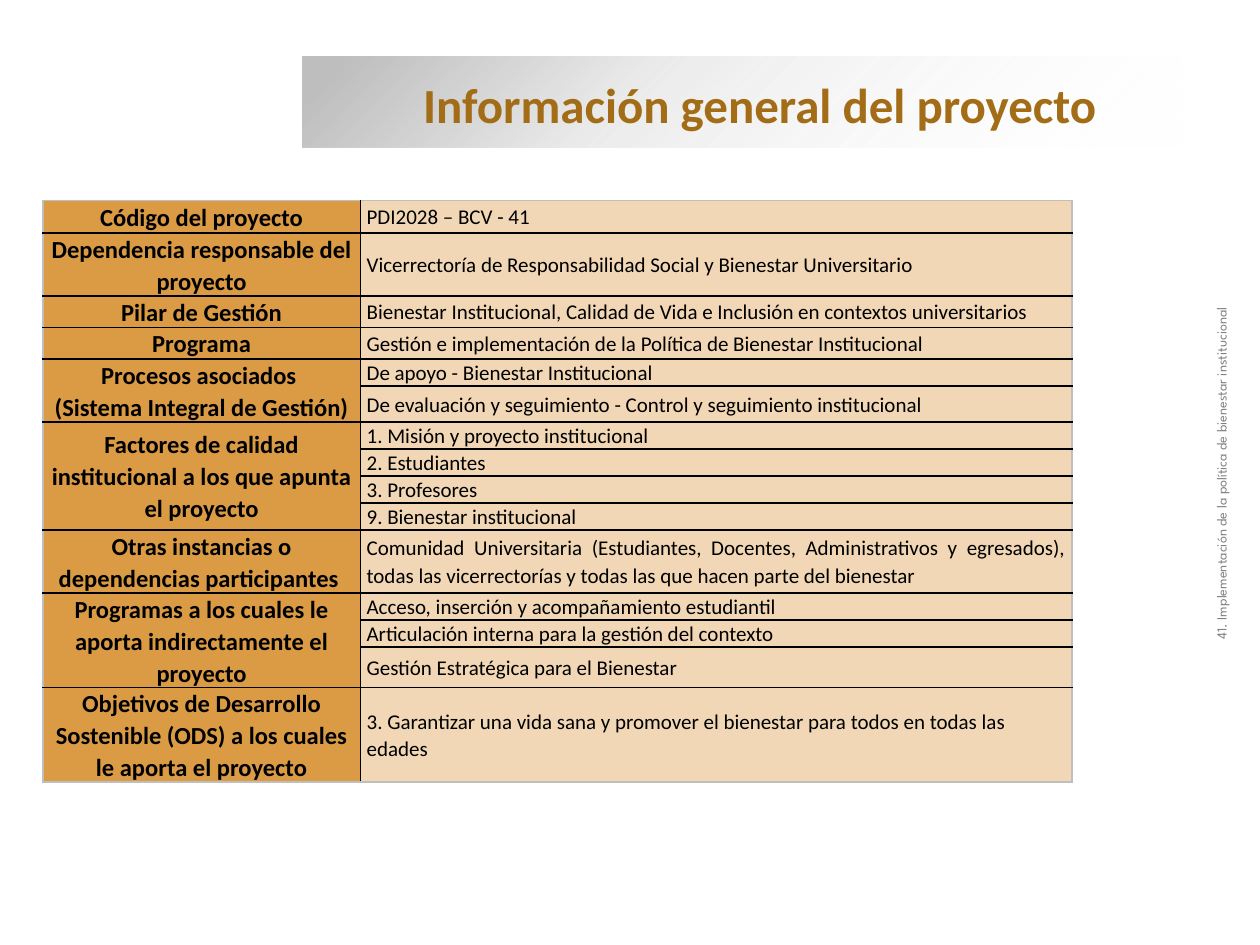
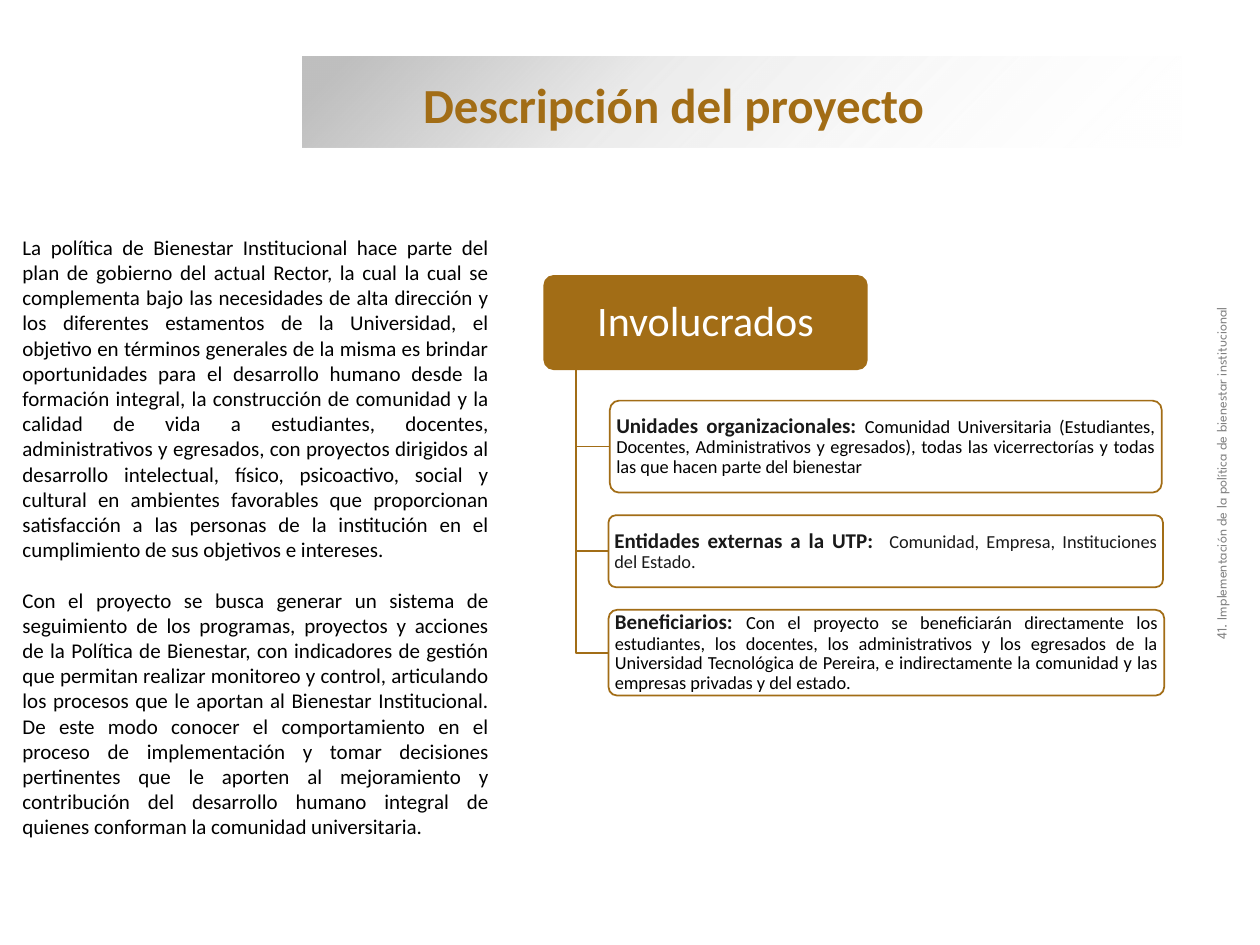
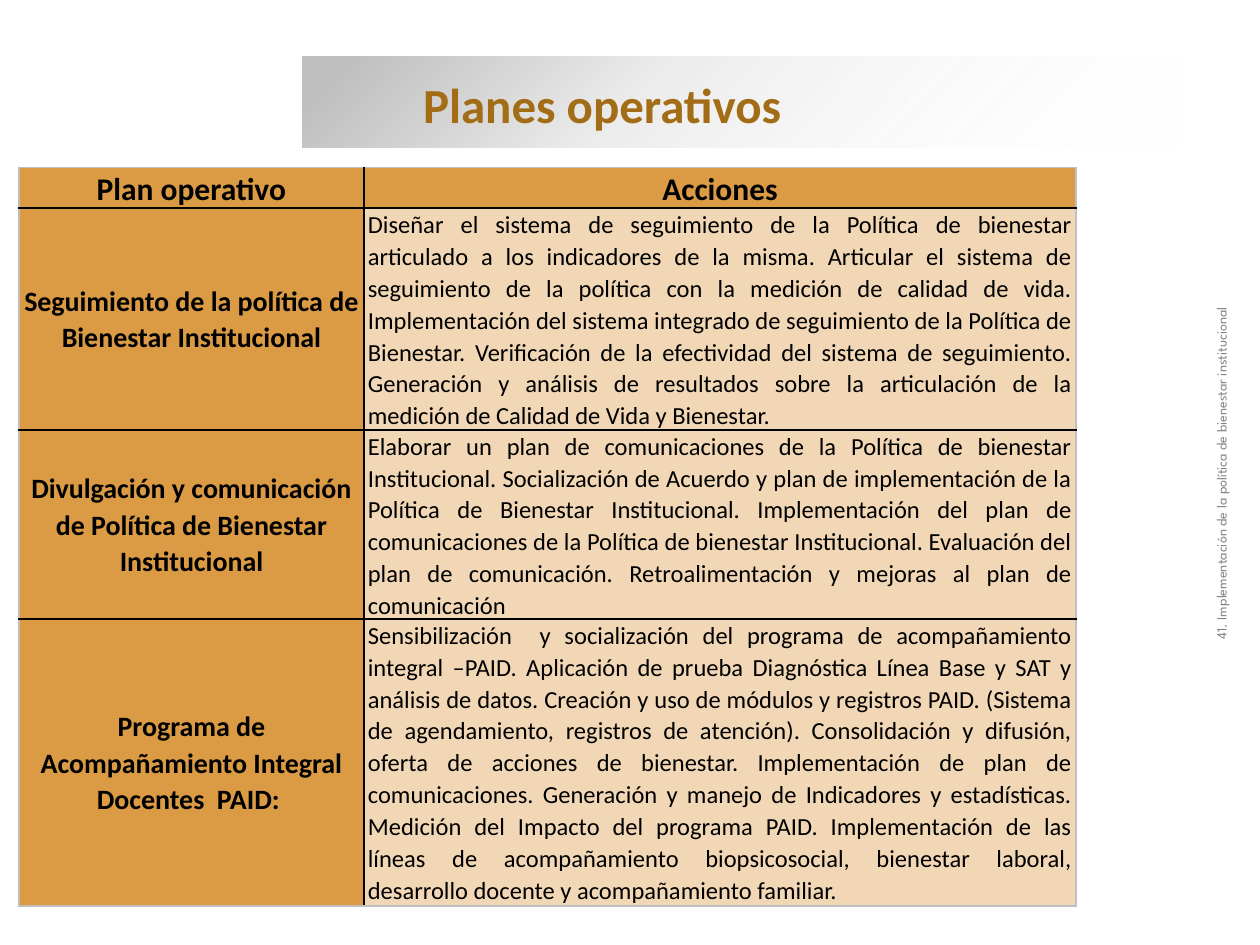
from dataclasses import dataclass

from lxml.etree import SubElement
from pptx import Presentation
from pptx.dml.color import RGBColor
from pptx.enum.shapes import MSO_SHAPE
from pptx.enum.text import MSO_ANCHOR, PP_ALIGN
from pptx.oxml import parse_xml
from pptx.oxml.ns import nsdecls, qn
from pptx.util import Inches, Pt

COLORS = {
    "brown": "A26D16",
    "ochre": "DB9B45",
    "sand": "F1D7B5",
    "silver": "BFBFBF",
    "gray": "808080",
    "ink": "191919",
    "black": "000000",
    "white": "FFFFFF",
}
FOOTER = "41. Implementación de la política de bienestar institucional"
BAND_STOPS = ((5, "silver", 100), (37, "silver", 31), (100, "white", 0))
TABLE_SPACING = 1.07


@dataclass(frozen=True)
class Box:
    left: float
    top: float
    width: float
    height: float

    def inches(self) -> tuple:
        return tuple(Inches(v) for v in (self.left, self.top, self.width, self.height))


@dataclass(frozen=True)
class Entry:
    text: str
    height: float = 0.21
    align: PP_ALIGN = PP_ALIGN.LEFT


@dataclass(frozen=True)
class Section:
    label: str
    entries: tuple


@dataclass(frozen=True)
class Plan:
    name: str
    actions: str
    height: float


@dataclass(frozen=True)
class Stakeholder:
    box: Box
    heading: str
    detail: str
    detail_color: str = "black"


SECTIONS = (
    Section("Código del proyecto", (Entry("PDI2028 – BCV - 41", 0.26),)),
    Section("Dependencia responsable del proyecto", (
        Entry("Vicerrectoría de Responsabilidad Social y Bienestar Universitario", 0.5),)),
    Section("Pilar de Gestión", (
        Entry("Bienestar Institucional, Calidad de Vida e Inclusión en contextos universitarios", 0.25),)),
    Section("Programa", (
        Entry("Gestión e implementación de la Política de Bienestar Institucional", 0.25, PP_ALIGN.JUSTIFY),)),
    Section("Procesos asociados \n(Sistema Integral de Gestión)", (
        Entry("De apoyo - Bienestar Institucional"),
        Entry("De evaluación y seguimiento - Control y seguimiento institucional", 0.28))),
    Section("Factores de calidad institucional a los que apunta el proyecto", (
        Entry("1. Misión y proyecto institucional"),
        Entry("2. Estudiantes"),
        Entry("3. Profesores"),
        Entry("9. Bienestar institucional"))),
    Section("Otras instancias o dependencias participantes ", (
        Entry("Comunidad Universitaria (Estudiantes, Docentes, Administrativos y egresados), "
              "todas las vicerrectorías y todas las que hacen parte del bienestar", 0.5, PP_ALIGN.JUSTIFY),)),
    Section("Programas a los cuales le aporta indirectamente el proyecto", (
        Entry("Acceso, inserción y acompañamiento estudiantil"),
        Entry("Articulación interna para la gestión del contexto"),
        Entry("Gestión Estratégica para el Bienestar", 0.32))),
    Section("Objetivos de Desarrollo Sostenible (ODS) a los cuales le aporta el proyecto", (
        Entry("3. Garantizar una vida sana y promover el bienestar para todos en todas las edades", 0.75),)),
)

DESCRIPTION = (
    "La política de Bienestar Institucional hace parte del plan de gobierno del actual Rector, la cual la "
    "cual se complementa bajo las necesidades de alta dirección y los diferentes estamentos de la "
    "Universidad, el objetivo en términos generales de la misma es brindar oportunidades para el desarrollo "
    "humano desde la formación integral, la construcción de comunidad y la calidad de vida a estudiantes, "
    "docentes, administrativos y egresados, con proyectos dirigidos al desarrollo intelectual, físico, "
    "psicoactivo, social y cultural en ambientes favorables que proporcionan satisfacción a las personas de "
    "la institución en el cumplimiento de sus objetivos e intereses.",
    "Con el proyecto se busca generar un sistema de seguimiento de los programas, proyectos y acciones de la "
    "Política de Bienestar, con indicadores de gestión que permitan realizar monitoreo y control, articulando "
    "los procesos que le aportan al Bienestar Institucional. De este modo conocer el comportamiento en el "
    "proceso de implementación y tomar decisiones pertinentes que le aporten al mejoramiento y contribución "
    "del desarrollo humano integral de quienes conforman la comunidad universitaria.",
)

STAKEHOLDERS = (
    Stakeholder(
        Box(4.84, 3.18, 4.38, 0.73), "Unidades organizacionales: ",
        "Comunidad Universitaria (Estudiantes, Docentes, Administrativos y egresados), todas las "
        "vicerrectorías y todas las que hacen parte del bienestar"),
    Stakeholder(
        Box(4.83, 4.09, 4.4, 0.57), "Entidades externas a la UTP:  ",
        "Comunidad, Empresa, Instituciones del Estado.", "ink"),
    Stakeholder(
        Box(4.83, 4.84, 4.41, 0.68), "Beneficiarios: ",
        "Con el proyecto se beneficiarán directamente los estudiantes, los docentes, los administrativos y "
        "los egresados de la Universidad Tecnológica de Pereira, e indirectamente la comunidad y las "
        "empresas privadas y del estado."),
)

PLANS = (
    Plan(
        "Seguimiento de la política de Bienestar Institucional",
        "Diseñar el sistema de seguimiento de la Política de bienestar articulado a los indicadores de la "
        "misma. Articular el sistema de seguimiento de la política con la medición de calidad de vida. "
        "Implementación del sistema integrado de seguimiento de la Política de Bienestar. Verificación de "
        "la efectividad del sistema de seguimiento. Generación y análisis de resultados sobre la "
        "articulación de la medición de Calidad de Vida y Bienestar.", 1.76),
    Plan(
        "Divulgación y comunicación de Política de Bienestar Institucional",
        "Elaborar un plan de comunicaciones de la Política de bienestar Institucional. Socialización de "
        "Acuerdo y plan de implementación de la Política de Bienestar Institucional. Implementación del "
        "plan de comunicaciones de la Política de bienestar Institucional. Evaluación del plan de "
        "comunicación. Retroalimentación y mejoras al plan de comunicación", 1.5),
    Plan(
        "Programa de Acompañamiento Integral Docentes  PAID: ",
        "Sensibilización  y socialización del programa de acompañamiento integral –PAID. Aplicación de "
        "prueba Diagnóstica Línea Base y SAT y análisis de datos. Creación y uso de módulos y registros "
        "PAID. (Sistema de agendamiento, registros de atención). Consolidación y difusión, oferta de "
        "acciones de bienestar. Implementación de plan de comunicaciones. Generación y manejo de "
        "Indicadores y estadísticas. Medición del Impacto del programa PAID. Implementación de las líneas "
        "de acompañamiento biopsicosocial, bienestar laboral, desarrollo docente y acompañamiento "
        "familiar.", 2.28),
)


def rgb(color: str) -> RGBColor:
    return RGBColor.from_string(COLORS[color])


def write(paragraph, text: str, *, size: float, color: str = "black", bold: bool = False,
          font: str = "Calibri", align: PP_ALIGN = PP_ALIGN.LEFT, spacing: float = 1.0) -> None:
    paragraph.alignment = align
    paragraph.line_spacing = spacing
    for index, line in enumerate(text.split("\n")):
        if index:
            paragraph.add_line_break()
        run = paragraph.add_run()
        run.text = line
        run.font.size = Pt(size)
        run.font.name = font
        run.font.bold = bold
        run.font.color.rgb = rgb(color)


def add_frame(slide, box: Box, anchor: MSO_ANCHOR = MSO_ANCHOR.TOP, rotation: float = 0):
    holder = slide.shapes.add_textbox(*box.inches())
    holder.rotation = rotation
    holder.text_frame.word_wrap = True
    holder.text_frame.vertical_anchor = anchor
    return holder.text_frame


def add_band(slide) -> None:
    band = slide.shapes.add_shape(MSO_SHAPE.RECTANGLE, *Box(2.4, 0.45, 6.98, 0.72).inches())
    band.shadow.inherit = False
    band.line.fill.background()
    stops = "".join(
        f'<a:gs pos="{position * 1000}"><a:srgbClr val="{COLORS[color]}">'
        f'<a:alpha val="{alpha * 1000}"/></a:srgbClr></a:gs>'
        for position, color, alpha in BAND_STOPS)
    gradient = parse_xml(f'<a:gradFill {nsdecls("a")} rotWithShape="1"><a:gsLst>{stops}</a:gsLst>'
                         '<a:lin ang="2700000" scaled="0"/></a:gradFill>')
    band._element.spPr.find(qn("a:prstGeom")).addnext(gradient)


def start_slide(presentation, title: str):
    slide = presentation.slides.add_slide(presentation.slide_layouts[6])
    add_band(slide)
    heading = add_frame(slide, Box(3.26, 0.54, 6.2, 0.57), MSO_ANCHOR.MIDDLE)
    write(heading.paragraphs[0], title, size=28, color="brown", bold=True)
    footer = add_frame(slide, Box(7.34, 3.57, 4.84, 0.37), rotation=270)
    write(footer.paragraphs[0], FOOTER, size=8, color="gray", font="League Spartan", align=PP_ALIGN.CENTER)
    return slide


def add_grid(slide, left: float, top: float, widths: tuple, heights: list):
    frame = slide.shapes.add_table(
        len(heights), len(widths), *Box(left, top, sum(widths), sum(heights)).inches())
    table = frame.table
    table.first_row = table.horz_banding = False
    for column, width in zip(table.columns, widths):
        column.width = Inches(width)
    for row, height in zip(table.rows, heights):
        row.height = Inches(height)
    last_row, last_column = len(heights) - 1, len(widths) - 1
    for r in range(len(heights)):
        for c in range(len(widths)):
            outer_sides = {"lnL": c == 0, "lnR": c == last_column, "lnT": r == 0, "lnB": r == last_row}
            set_borders(table.cell(r, c), outer_sides)
    return table


def set_borders(cell, outer_sides: dict) -> None:
    properties = cell._tc.get_or_add_tcPr()
    for side, is_outer in outer_sides.items():
        border = SubElement(properties, qn(f"a:{side}"), w=str(Pt(1)))
        fill = SubElement(border, qn("a:solidFill"))
        SubElement(fill, qn("a:srgbClr"), val=COLORS["silver" if is_outer else "black"])


def fill_cell(cell, text: str, fill: str, size: float, align: PP_ALIGN,
              bold: bool = False, inset: float = 0.04) -> None:
    cell.fill.solid()
    cell.fill.fore_color.rgb = rgb(fill)
    cell.vertical_anchor = MSO_ANCHOR.MIDDLE
    cell.margin_left = cell.margin_right = Inches(inset)
    cell.margin_top = cell.margin_bottom = Inches(0)
    write(cell.text_frame.paragraphs[0], text, size=size, bold=bold, align=align, spacing=TABLE_SPACING)


def fill_label(cell, text: str, size: float) -> None:
    fill_cell(cell, text, "ochre", size, PP_ALIGN.CENTER, bold=True)


def add_panel(slide, box: Box, fill: str, inset_x: float, inset_y: float):
    panel = slide.shapes.add_shape(MSO_SHAPE.ROUNDED_RECTANGLE, *box.inches())
    panel.adjustments[0] = 0.1
    panel.shadow.inherit = False
    panel.fill.solid()
    panel.fill.fore_color.rgb = rgb(fill)
    panel.line.color.rgb = rgb("brown")
    panel.line.width = Pt(1)
    frame = panel.text_frame
    frame.word_wrap = True
    frame.vertical_anchor = MSO_ANCHOR.MIDDLE
    frame.margin_left = frame.margin_right = Inches(inset_x)
    frame.margin_top = frame.margin_bottom = Inches(inset_y)
    return panel


def add_branch(slide, header, panel) -> None:
    trunk_x = Inches(4.57)
    middle = panel.top + panel.height // 2
    builder = slide.shapes.build_freeform(trunk_x, header.top + header.height)
    builder.add_line_segments([(trunk_x, middle), (panel.left, middle)], close=False)
    branch = builder.convert_to_shape()
    branch.shadow.inherit = False
    branch.fill.background()
    branch.line.color.rgb = rgb("brown")
    branch.line.width = Pt(1)


def build_information(presentation) -> None:
    slide = start_slide(presentation, "Información general del proyecto")
    heights = [entry.height for section in SECTIONS for entry in section.entries]
    table = add_grid(slide, 0.34, 1.59, (2.52, 5.65), heights)
    row = 0
    for section in SECTIONS:
        label = table.cell(row, 0)
        if len(section.entries) > 1:
            label.merge(table.cell(row + len(section.entries) - 1, 0))
        fill_label(label, section.label, 14)
        for entry in section.entries:
            fill_cell(table.cell(row, 1), entry.text, "sand", 12, entry.align, inset=0.05)
            row += 1


def build_description(presentation) -> None:
    slide = start_slide(presentation, "Descripción del proyecto")
    body = add_frame(slide, Box(0.08, 1.81, 3.9, 4.95))
    for index, text in enumerate(DESCRIPTION):
        paragraph = body.add_paragraph() if index else body.paragraphs[0]
        if index:
            paragraph.space_before = Pt(14.4)
        write(paragraph, text, size=12, align=PP_ALIGN.JUSTIFY)

    header = add_panel(slide, Box(4.32, 2.19, 2.56, 0.74), "brown", 0.05, 0.03)
    write(header.text_frame.paragraphs[0], "Involucrados", size=24, color="white",
          align=PP_ALIGN.CENTER, spacing=0.9)
    for stakeholder in STAKEHOLDERS:
        panel = add_panel(slide, stakeholder.box, "white", 0.03, 0.02)
        paragraph = panel.text_frame.paragraphs[0]
        write(paragraph, stakeholder.heading, size=12, color="ink", bold=True)
        write(paragraph, stakeholder.detail, size=10.5, color=stakeholder.detail_color,
              align=PP_ALIGN.JUSTIFY, spacing=0.9)
        add_branch(slide, header, panel)


def build_plans(presentation) -> None:
    slide = start_slide(presentation, "Planes operativos")
    table = add_grid(slide, 0.15, 1.33, (2.74, 5.65), [0.32] + [plan.height for plan in PLANS])
    for column, heading in enumerate(("Plan operativo", "Acciones")):
        fill_label(table.cell(0, column), heading, 18)
    for row, plan in enumerate(PLANS, start=1):
        fill_label(table.cell(row, 0), plan.name, 16)
        fill_cell(table.cell(row, 1), plan.actions, "sand", 14, PP_ALIGN.JUSTIFY, inset=0.03)


def main() -> None:
    presentation = Presentation()
    presentation.slide_width = Inches(10)
    presentation.slide_height = Inches(7.5)
    build_information(presentation)
    build_description(presentation)
    build_plans(presentation)
    presentation.save("out.pptx")


if __name__ == "__main__":
    main()
